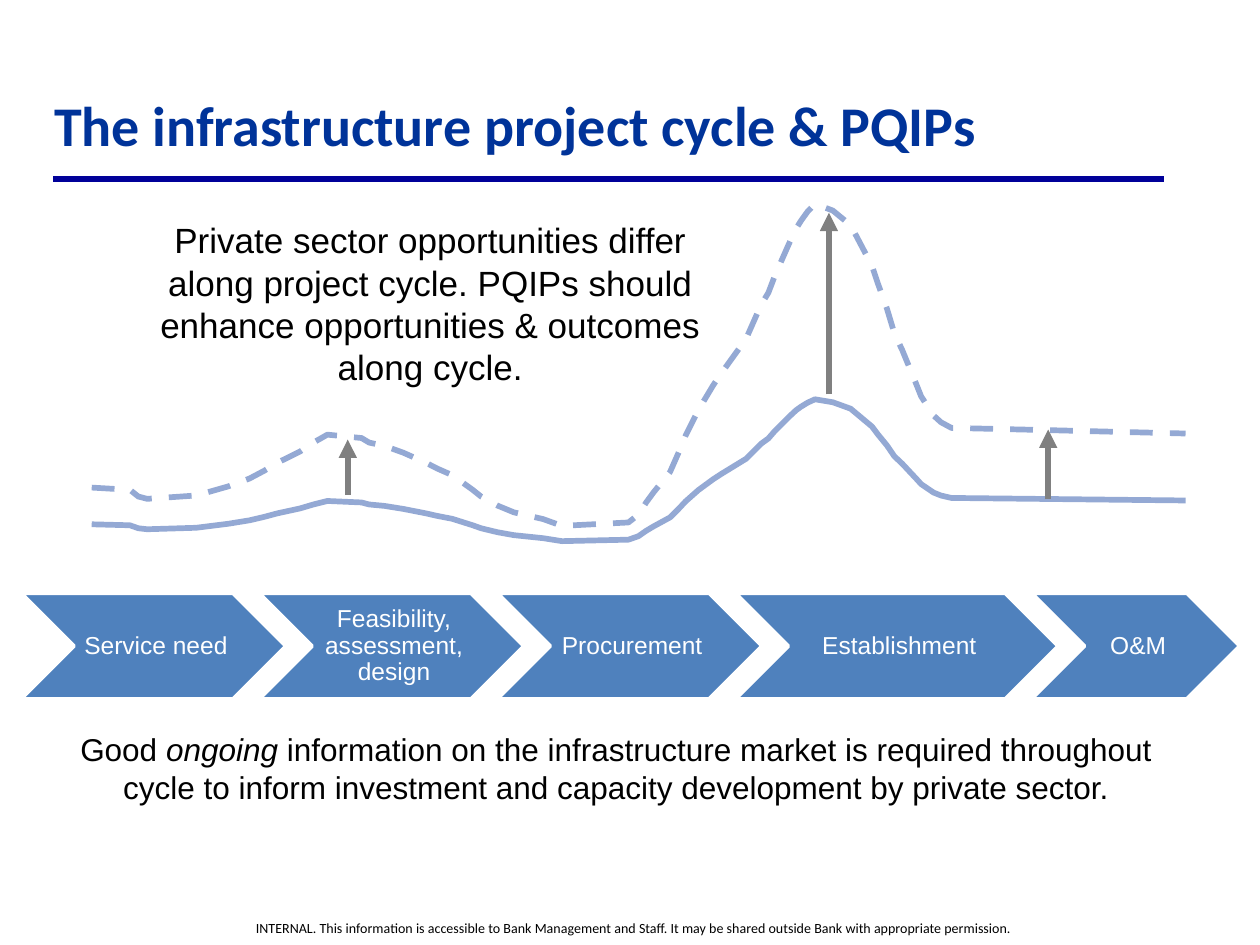
from lxml import etree
from pptx import Presentation
from pptx.dml.color import RGBColor
from pptx.enum.dml import MSO_LINE
from pptx.enum.shapes import MSO_CONNECTOR, MSO_SHAPE
from pptx.enum.text import MSO_ANCHOR, PP_ALIGN
from pptx.oxml.ns import qn
from pptx.util import Cm, Pt

LEFT, CENTER = PP_ALIGN.LEFT, PP_ALIGN.CENTER
MIDDLE = MSO_ANCHOR.MIDDLE
CHEVRON = MSO_SHAPE.CHEVRON
STRAIGHT = MSO_CONNECTOR.STRAIGHT
SOLID, DASH = MSO_LINE.SOLID, MSO_LINE.DASH


def paint(target, color):
    target.rgb = RGBColor.from_string(color)


def write(frame, text, size, font, color, align, bold=False):
    frame.word_wrap = True
    frame.text = text
    para = frame.paragraphs[0]
    para.alignment = align
    para.font.size = Pt(size)
    para.font.name = font
    para.font.bold = bold
    paint(para.font.color, color)
    return para


prs = Presentation()
prs.slide_width, prs.slide_height = Cm(25.4), Cm(19.05)
slide = prs.slides.add_slide(prs.slide_layouts[6])
shapes = slide.shapes

# Footer
box = shapes.add_textbox(Cm(5.16), Cm(18.54), Cm(17), Cm(0.33))
frame = box.text_frame
frame.margin_left = frame.margin_right = 0
frame.margin_top = frame.margin_bottom = 0
write(frame, "INTERNAL. This information is accessible to Bank Management and Staff. "
      "It may be shared outside Bank with appropriate permission.",
      8, "Calibri", "000000", LEFT)

# Title
box = shapes.add_textbox(Cm(0.84), Cm(1.7), Cm(23.7), Cm(1.63))
write(box.text_frame, "The infrastructure project cycle & PQIPs",
      32, "Calibri", "003399", LEFT, True)

# Stages of the cycle, each overlapping the one before
stages = [("Service need", 5.33), ("Feasibility, assessment, design", 5.33),
          ("Procurement", 5.33), ("Establishment", 6.5), ("O&M", 4.19)]
left = 0.43
for name, width in stages:
    stage = shapes.add_shape(CHEVRON, Cm(left), Cm(11.96), Cm(width), Cm(2.13))
    stage.shadow.inherit = False
    stage.fill.solid()
    paint(stage.fill.fore_color, "4F81BD")
    paint(stage.line.color, "FFFFFF")
    stage.line.width = Pt(2)
    frame = stage.text_frame
    frame.vertical_anchor = MIDDLE
    frame.margin_left = Cm(0.15)
    frame.margin_right = frame.margin_top = frame.margin_bottom = Cm(0.05)
    para = write(frame, name, 14, "Arial", "FFFFFF", CENTER)
    para.line_spacing = 0.9
    left += width - 0.53

# Messages
box = shapes.add_textbox(Cm(2.54), Cm(4.29), Cm(12.27), Cm(3.68))
write(box.text_frame, "Private sector opportunities differ along project cycle. "
      "PQIPs should enhance opportunities & outcomes along cycle.",
      20, "Arial", "000000", CENTER)

box = shapes.add_textbox(Cm(0.89), Cm(14.6), Cm(23.06), Cm(1.8))
para = write(box.text_frame, "Good ", 18, "Arial", "000000", CENTER)
for text, slant in [("ongoing", True),
                    (" information on the infrastructure market is required throughout "
                     "cycle to inform investment and capacity development by private "
                     "sector.", False)]:
    run = para.add_run()
    run.text = text
    run.font.italic = slant

# Opportunity curves: the dashed one is the solid one stretched upwards
curve = [
    (1.85, 10.57), (2.62, 10.59), (2.79, 10.65), (2.97, 10.67), (3.96, 10.64),
    (4.6, 10.56), (5.03, 10.49), (5.33, 10.42), (5.59, 10.35), (6.05, 10.25),
    (6.32, 10.17), (6.6, 10.1), (7.29, 10.13), (7.44, 10.17), (7.75, 10.2),
    (8.13, 10.26), (8.59, 10.35), (8.81, 10.4), (9.12, 10.46), (9.53, 10.59),
    (9.7, 10.65), (10.03, 10.73), (10.36, 10.79), (10.95, 10.85), (11.33, 10.91),
    (12.67, 10.88), (12.87, 10.81), (13.03, 10.7), (13.18, 10.61), (13.51, 10.43),
    (13.69, 10.25), (13.82, 10.11), (14.08, 9.88), (14.38, 9.66), (14.55, 9.55),
    (15.04, 9.25), (15.34, 8.95), (15.49, 8.84), (15.62, 8.69), (15.9, 8.41),
    (16.05, 8.27), (16.15, 8.2), (16.28, 8.12), (16.43, 8.05), (16.79, 8.11),
    (17.15, 8.24), (17.58, 8.6), (17.7, 8.76), (17.88, 8.98), (18.03, 9.2),
    (18.19, 9.35), (18.49, 9.67), (18.57, 9.76), (18.82, 9.93), (18.97, 9.99),
    (19.18, 10.04), (21.13, 10.06), (23.9, 10.09)]
peak = 8.05
for top, stretch, dash in [(peak, 1, SOLID), (4.11, 2.27, DASH)]:
    points = [(Cm(x), Cm(top + (y - peak) * stretch)) for x, y in curve]
    pen = shapes.build_freeform(*points[0])
    pen.add_line_segments(points[1:], close=False)
    wave = pen.convert_to_shape()
    wave.shadow.inherit = False
    wave.fill.background()
    wave.line.width = Pt(3.25)
    paint(wave.line.color, "003399")
    wave.line.dash_style = dash
    tint = wave.line._ln.find(".//" + qn("a:srgbClr"))
    etree.SubElement(tint, qn("a:alpha"), val="41000")

# Title rule and the arrows from one curve to the other
lines = [(1.07, 3.61, 23.47, 3.61, "000099", 3, False),
         (16.71, 7.95, 16.71, 4.29, "808080", 3.5, True),
         (21.13, 10.06, 21.13, 8.66, "808080", 3.5, True),
         (7.01, 9.98, 7.01, 8.86, "808080", 3.5, True)]
for x1, y1, x2, y2, color, width, arrow in lines:
    line = shapes.add_connector(STRAIGHT, Cm(x1), Cm(y1), Cm(x2), Cm(y2))
    line.line.width = Pt(width)
    paint(line.line.color, color)
    if arrow:
        etree.SubElement(line.line._ln, qn("a:tailEnd"), type="triangle")
    etree.SubElement(line._element.spPr, qn("a:effectLst"))

prs.save("out.pptx")
